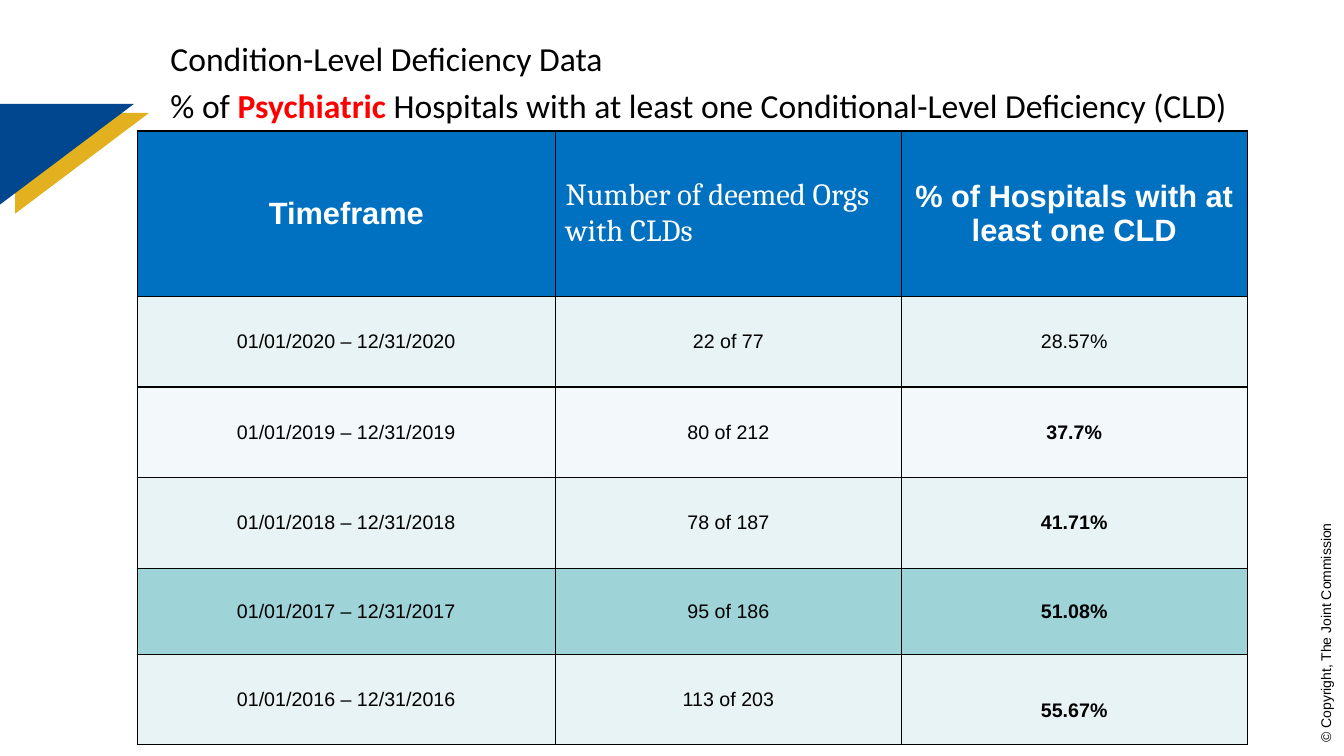
from dataclasses import dataclass

from lxml import etree
from pptx import Presentation
from pptx import util as u
from pptx.dml.color import RGBColor
from pptx.enum import text
from pptx.oxml import ns

PX = u.Inches(0.01)  # 100 px to the inch


@dataclass(frozen=True)
class Theme:
    black: str = "000000"
    white: str = "FFFFFF"
    red: str = "FF0000"
    gold: str = "E3B11F"
    navy: str = "00478F"
    header: str = "0070C0"
    band: str = "E7F3F4"
    light_band: str = "F3F9FA"
    strong_band: str = "9ED3D7"
    sans: str = "Arial"
    heading: str = "Calibri"
    serif: str = "Cambria"
    heading_size: int = 24
    header_size: int = 22
    cell_size: int = 14
    copyright_size: int = 10
    border: int = 1


T = Theme()


@dataclass(frozen=True)
class Triangle:
    left: int
    top: int
    color: str
    width: int = 133
    height: int = 100


@dataclass(frozen=True)
class Period:
    year: int
    orgs: str
    share: str
    fill: str
    height: int = 90
    bold: bool = True


TRIANGLES = [Triangle(15, 112, T.gold), Triangle(0, 103, T.navy)]
COLUMNS = [415, 343, 343]
HEADER_HEIGHT = 164
HEADERS = ["Timeframe", "Number of deemed Orgs with CLDs", "% of Hospitals with at least one CLD"]
PERIODS = [
    Period(2020, "22 of 77", "28.57%", T.band, bold=False),
    Period(2019, "80 of 212", "37.7%", T.light_band),
    Period(2018, "78 of 187", "41.71%", T.band),
    Period(2017, "95 of 186", "51.08%", T.strong_band, height=85),
    Period(2016, "113 of 203", "55.67%", T.band),
]


def place(s, left: int, top: int, width: int, height: int) -> None:
    s.left, s.top, s.width, s.height = (v * PX for v in (left, top, width, height))


def write(p, words: str, *, size: int, font: str = T.sans, color: str = T.black,
          bold: bool = False, align=text.PP_ALIGN.LEFT) -> None:
    p.alignment = align
    r = p.add_run()
    r.text = words
    r.font.name, r.font.size, r.font.bold = font, u.Pt(size), bold
    r.font.color.rgb = RGBColor.from_string(color)


def draw_triangle(slide, t: Triangle) -> None:
    fb = slide.shapes.build_freeform(t.left, t.top, scale=PX)
    fb.add_line_segments([(t.left + t.width, t.top), (t.left, t.top + t.height)], close=True)
    sp = fb.convert_to_shape()
    sp.shadow.inherit = False
    sp.fill.solid()
    sp.fill.fore_color.rgb = RGBColor.from_string(t.color)
    sp.line.fill.background()


def draw_heading(body) -> None:
    place(body, 159, 33, 1084, 85)
    tf = body.text_frame
    tf.auto_size = text.MSO_AUTO_SIZE.NONE
    first, second = tf.paragraphs[0], tf.add_paragraph()
    for p in (first, second):
        pPr = p._p.get_or_add_pPr()
        pPr.set("marL", "0")
        pPr.set("indent", "0")
        etree.SubElement(pPr, ns.qn("a:buNone"))
    first.space_before = u.Pt(0)
    second.space_before = u.Pt(T.heading_size * 0.2)
    style = dict(size=T.heading_size, font=T.heading)
    write(first, "Condition-Level Deficiency Data", **style)
    write(second, "% of ", **style)
    write(second, "Psychiatric ", color=T.red, bold=True, **style)
    write(second, "Hospitals with at least one Conditional-Level Deficiency (CLD)", **style)


def draw_copyright(slide) -> None:
    s = slide.shapes.add_textbox(0, 0, 0, 0)
    place(s, 1195, 613, 240, 27)
    s.rotation = 270
    s.text_frame.word_wrap = False
    write(s.text_frame.paragraphs[0], "© Copyright, The Joint Commission", size=T.copyright_size)


def fill_cell(cell, fill: str) -> None:
    """Give a cell its colour, borders and vertical centring."""
    cell.vertical_anchor = text.MSO_ANCHOR.MIDDLE
    tcPr = cell._tc.get_or_add_tcPr()
    for side in ("lnL", "lnR", "lnT", "lnB"):
        ln = etree.SubElement(tcPr, ns.qn(f"a:{side}"), w=str(u.Pt(T.border)))
        solid = etree.SubElement(ln, ns.qn("a:solidFill"))
        etree.SubElement(solid, ns.qn("a:srgbClr"), val=T.black)
    cell.fill.solid()
    cell.fill.fore_color.rgb = RGBColor.from_string(fill)


def draw_table(slide) -> None:
    heights = [HEADER_HEIGHT] + [period.height for period in PERIODS]
    box = (136, 130, sum(COLUMNS), sum(heights))
    table = slide.shapes.add_table(len(heights), len(COLUMNS), *(v * PX for v in box)).table
    for column, width in zip(table.columns, COLUMNS):
        column.width = width * PX
    for row, height in zip(table.rows, heights):
        row.height = height * PX

    center = text.PP_ALIGN.CENTER
    for i, words in enumerate(HEADERS):
        cell = table.cell(0, i)
        fill_cell(cell, T.header)
        plain = i == 1
        write(cell.text_frame.paragraphs[0], words, size=T.header_size, color=T.white,
              font=T.serif if plain else T.sans, bold=not plain,
              align=text.PP_ALIGN.LEFT if plain else center)

    for n, period in enumerate(PERIODS, 1):
        dates = f"01/01/{period.year} – 12/31/{period.year}"
        for i, words in enumerate((dates, period.orgs, period.share)):
            cell = table.cell(n, i)
            fill_cell(cell, period.fill)
            write(cell.text_frame.paragraphs[0], words, size=T.cell_size,
                  bold=period.bold and i == 2, align=center)
    table.cell(len(PERIODS), 2).margin_top = 27 * PX  # last share sits lower


def main() -> None:
    prs = Presentation()
    prs.slide_width, prs.slide_height = 1333 * PX, 750 * PX
    slide = prs.slides.add_slide(prs.slide_layouts[1])
    title = slide.shapes.title
    title.element.getparent().remove(title.element)
    draw_copyright(slide)
    for triangle in TRIANGLES:
        draw_triangle(slide, triangle)
    draw_heading(slide.placeholders[1])
    draw_table(slide)
    prs.save("out.pptx")


if __name__ == "__main__":
    main()
